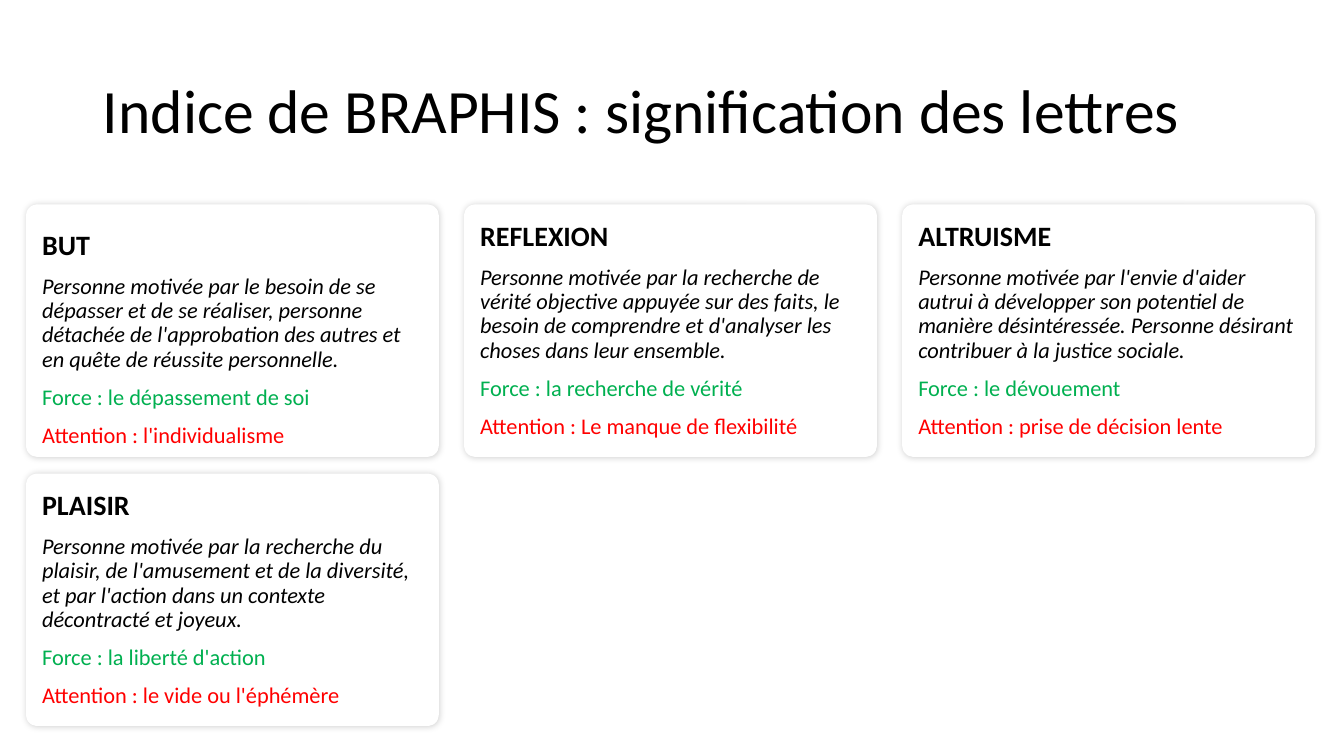
from copy import deepcopy

from lxml import etree
from pptx import Presentation
from pptx.dml.color import RGBColor
from pptx.enum.shapes import MSO_SHAPE
from pptx.enum.text import MSO_ANCHOR, MSO_AUTO_SIZE, PP_ALIGN
from pptx.oxml.ns import qn
from pptx.util import Inches, Pt

ROUND = MSO_SHAPE.ROUNDED_RECTANGLE
MIDDLE = MSO_ANCHOR.MIDDLE
FIXED = MSO_AUTO_SIZE.NONE
LEFT = PP_ALIGN.LEFT

FONT = "Calibri"
COLORS = {"ink": "000000", "card": "FFFFFF", "force": "00B050", "risk": "FF0000"}

CARDS = [
    ("BUT",
     "Personne motivée par le besoin de se dépasser et de se réaliser, personne "
     "détachée de l'approbation des autres et en quête de réussite personnelle.",
     "Force : le dépassement de soi",
     "Attention : l'individualisme"),
    ("REFLEXION",
     "Personne motivée par la recherche de vérité objective appuyée sur des faits, "
     "le besoin de comprendre et d'analyser les choses dans leur ensemble.",
     "Force : la recherche de vérité",
     "Attention : Le manque de flexibilité"),
    ("ALTRUISME",
     "Personne motivée par l'envie d'aider autrui à développer son potentiel de "
     "manière désintéressée. Personne désirant contribuer à la justice sociale.",
     "Force : le dévouement",
     "Attention : prise de décision lente"),
    ("PLAISIR",
     "Personne motivée par la recherche du plaisir, de l'amusement et de la "
     "diversité, et par l'action dans un contexte décontracté et joyeux.",
     "Force : la liberté d'action",
     "Attention : le vide ou l'éphémère"),
]


def color(name):
    return RGBColor.from_string(COLORS[name])


def write(para, text, size=16, tint="ink", bold=False, italic=False, before=10):
    para.alignment = LEFT
    para.line_spacing = 0.9
    para.space_before = Pt(before)
    props = para._p.get_or_add_pPr()
    props.set("marL", "0")
    props.set("indent", "0")
    etree.SubElement(props, qn("a:buNone"))
    run = para.add_run()
    run.text = text
    run.font.name = FONT
    run.font.size = Pt(size)
    run.font.bold = bold
    run.font.italic = italic
    run.font.color.rgb = color(tint)


def set_frame(shape):
    frame = shape.text_frame
    frame.word_wrap = True
    frame.auto_size = FIXED
    frame.vertical_anchor = MIDDLE
    return frame


def add_glow(shape):
    glow = etree.SubElement(shape._element.spPr, qn("a:effectLst"))
    shade = etree.SubElement(glow, qn("a:outerShdw"), blurRad=str(Pt(5)),
                             dist="0", dir="0", algn="ctr", rotWithShape="0")
    tone = etree.SubElement(shade, qn("a:srgbClr"), val=COLORS["ink"])
    etree.SubElement(tone, qn("a:alpha"), val="20000")


def add_title(slide, box):
    title = slide.shapes.title
    title.left, title.top, title.width, title.height = map(Inches, box)
    frame = set_frame(title)
    write(frame.paragraphs[0], "Indice de BRAPHIS : signification des lettres",
          size=44, before=0)


def add_panel(slide, box):
    panel = slide.shapes.add_shape(ROUND, *map(Inches, box))
    panel.adjustments[0] = 0.027
    panel.fill.solid()
    panel.fill.fore_color.rgb = color("card")
    panel.line.color.rgb = color("card")
    panel.line.width = Pt(6)
    add_glow(panel)
    return panel


def use_body(slide, panel):
    body = slide.placeholders[1]
    old = body._element.spPr
    old.getparent().replace(old, deepcopy(panel._element.spPr))
    panel._element.getparent().remove(panel._element)
    return body


def fill_card(shape, card):
    name, trait, force, risk = card
    frame = set_frame(shape)
    write(frame.paragraphs[0], name, size=20, bold=True)
    write(frame.add_paragraph(), trait, italic=True)
    write(frame.add_paragraph(), force, tint="force")
    write(frame.add_paragraph(), risk, tint="risk")
    return frame


def add_cards(slide, box):
    left, top, wide, high = box
    cols, gap_x, gap_y = 3, 0.335, 0.25
    card_w = (wide - (cols - 1) * gap_x) / cols
    card_h = (high - gap_y) / 2
    for i, card in enumerate(CARDS):
        row, col = divmod(i, cols)
        panel = add_panel(slide, (left + col * (card_w + gap_x),
                                  top + row * (card_h + gap_y), card_w, card_h))
        if i == 0:
            frame = fill_card(use_body(slide, panel), card)
            frame.margin_top = Inches(0.18)
            frame.margin_bottom = 0
        else:
            fill_card(panel, card)


def main():
    deck = Presentation()
    deck.slide_width = Inches(13.33)
    deck.slide_height = Inches(7.5)
    slide = deck.slides.add_slide(deck.slide_layouts[1])
    add_title(slide, (0.92, 0.4, 11.5, 1.45))
    add_cards(slide, (0.3, 2.07, 12.7, 5.09))
    deck.save("out.pptx")


if __name__ == "__main__":
    main()
